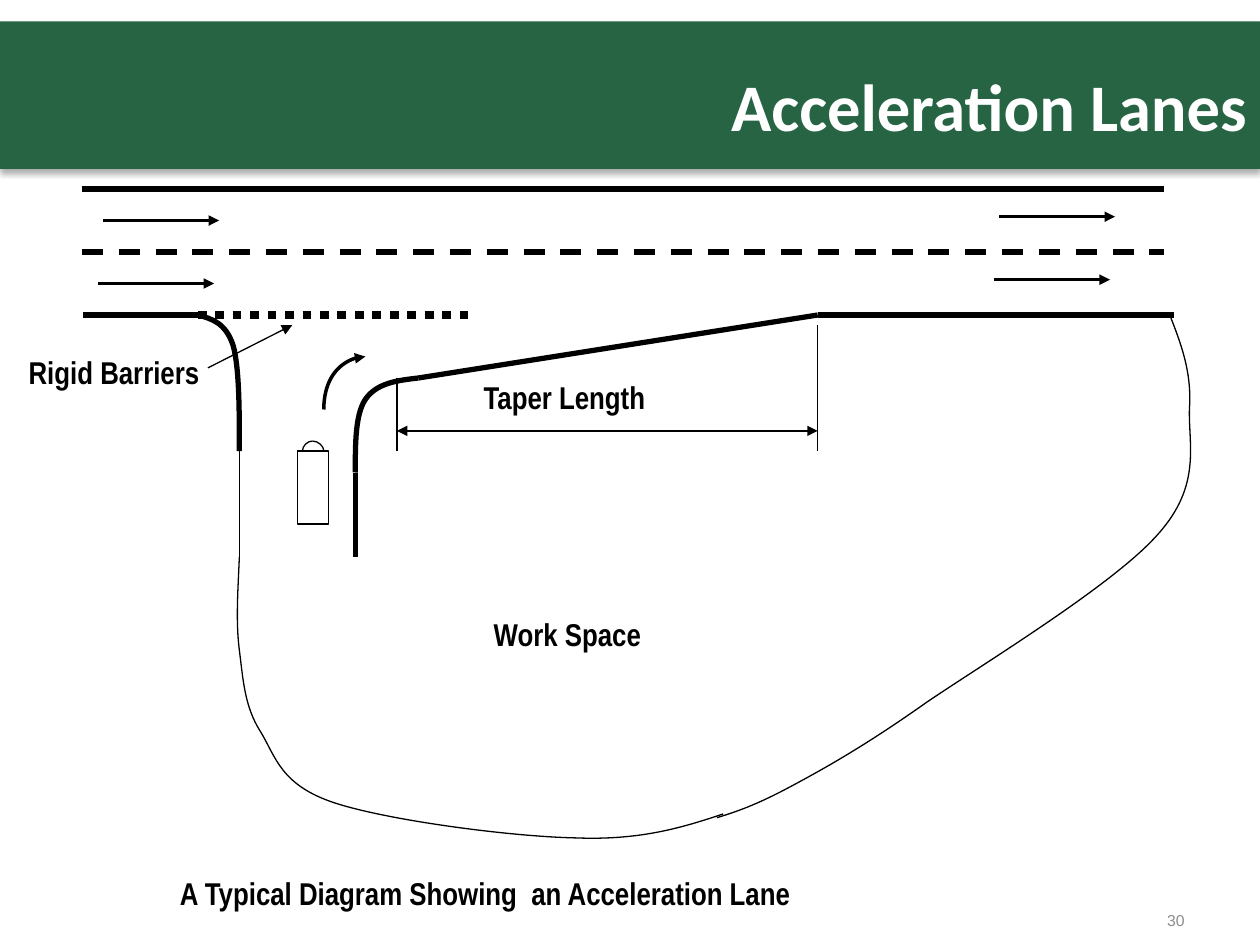
from lxml.etree import SubElement
from pptx import Presentation
from pptx.dml.color import RGBColor
from pptx.enum.dml import MSO_LINE
from pptx.enum.shapes import MSO_CONNECTOR, MSO_SHAPE
from pptx.enum.text import MSO_ANCHOR, PP_ALIGN
from pptx.oxml.ns import qn
from pptx.util import Inches, Pt

COLORS = {"banner": "276444", "title": "FFFFFF", "ink": "000000", "number": "8C8C8C"}
THIN, ARROW, EDGE, BARRIER = 0.75, 2, 3, 5


def color(name):
    return RGBColor.from_string(COLORS[name])


def style_line(shape, width, dash=None, ends=()):
    """Set the stroke; ends holds "headEnd" and/or "tailEnd" for arrowheads."""
    line = shape.line
    line.color.rgb = color("ink")
    line.width = Pt(width)
    if dash is not None:
        line.dash_style = dash
    stroke = line._get_or_add_ln()
    for end in ends:
        SubElement(stroke, qn(f"a:{end}"), type="triangle")


def add_line(slide, start, end, width, dash=None, ends=()):
    connector = slide.shapes.add_connector(
        MSO_CONNECTOR.STRAIGHT, *(Inches(value) for value in (*start, *end)))
    style_line(connector, width, dash, ends)
    SubElement(connector._element.spPr, qn("a:effectLst"))


def add_curve(slide, start, segments, width, ends=()):
    """Draw cubic Bezier segments, each given as x1, y1, x2, y2, x3, y3."""
    builder = slide.shapes.build_freeform(Inches(start[0]), Inches(start[1]))
    builder.add_line_segments(
        [(Inches(segment[i]), Inches(segment[i + 1]))
         for segment in segments for i in (0, 2, 4)], close=False)
    shape = builder.convert_to_shape()

    # Join every three straight segments into one curve
    outline = next(shape._element.iter(qn("a:path")))
    steps = outline.findall(qn("a:lnTo"))
    for first in range(0, len(steps), 3):
        curve = SubElement(outline, qn("a:cubicBezTo"))
        for step in steps[first:first + 3]:
            curve.append(step[0])
            outline.remove(step)

    shape.shadow.inherit = False
    shape.fill.background()
    style_line(shape, width, ends=ends)


def write_text(shape, text, font_name, size, color_name, align, bold):
    paragraph = shape.text_frame.paragraphs[0]
    paragraph.alignment = align
    run = paragraph.add_run()
    run.text = text
    font = run.font
    font.name, font.size, font.bold = font_name, Pt(size), bold
    font.color.rgb = color(color_name)


def add_text_box(slide, box):
    shape = slide.shapes.add_textbox(*(Inches(value) for value in box))
    shape.text_frame.word_wrap = True
    return shape


def add_label(slide, text, box, align=PP_ALIGN.LEFT):
    write_text(add_text_box(slide, box), text, "Arial Narrow", 18, "ink", align, True)


def add_header(slide):
    title = slide.shapes.title
    title.left, title.top, title.width, title.height = (
        Inches(value) for value in (0.08, 0.25, 9.92, 1.17))
    title.text_frame.vertical_anchor = MSO_ANCHOR.MIDDLE
    write_text(title, "Acceleration Lanes", "Calibri", 38, "title", PP_ALIGN.RIGHT, True)

    banner = slide.shapes.add_shape(
        MSO_SHAPE.RECTANGLE, 0, Inches(0.17), Inches(10), Inches(1.17))
    banner.fill.solid()
    banner.fill.fore_color.rgb = color("banner")
    banner.line.fill.background()
    effects = SubElement(banner._element.spPr, qn("a:effectLst"))
    shadow = SubElement(effects, qn("a:outerShdw"), blurRad=str(Pt(3.5)),
                        dist=str(Pt(2.2)), dir="5400000", rotWithShape="0")
    shade = SubElement(shadow, qn("a:srgbClr"), val=COLORS["ink"])
    SubElement(shade, qn("a:alpha"), val="32000")
    title._element.addprevious(banner._element)  # banner goes behind the title


def add_road(slide):
    # Main carriageway
    add_line(slide, (0.65, 1.5), (9.24, 1.5), EDGE)
    add_line(slide, (0.65, 2), (9.24, 2), EDGE, MSO_LINE.DASH)
    add_line(slide, (0.66, 2.5), (1.57, 2.5), EDGE)
    add_line(slide, (6.49, 2.5), (9.32, 2.5), EDGE)
    add_line(slide, (1.57, 2.5), (3.74, 2.5), BARRIER, MSO_LINE.ROUND_DOT)

    # Ramp edges and taper
    add_line(slide, (3.32, 3), (6.49, 2.5), EDGE)
    add_curve(slide, (3.32, 3), [(3.15, 3.02, 2.99, 3.04, 2.9, 3.17),
                                 (2.82, 3.29, 2.82, 3.52, 2.82, 3.75)], EDGE)
    add_line(slide, (2.82, 3.75), (2.82, 4.42), EDGE)
    add_curve(slide, (1.57, 2.5), [(1.68, 2.53, 1.79, 2.56, 1.85, 2.74),
                                   (1.9, 2.92, 1.9, 3.25, 1.9, 3.58)], EDGE)

    # Traffic direction
    for left, top in ((0.82, 1.75), (0.78, 2.25), (7.93, 1.72), (7.89, 2.22)):
        add_line(slide, (left, top), (left + 0.92, top), ARROW, ends=["tailEnd"])
    add_curve(slide, (2.9, 2.83), [(2.72, 2.83, 2.57, 3.02, 2.57, 3.25)],
              ARROW, ["headEnd"])


def add_vehicle(slide):
    body = slide.shapes.add_shape(
        MSO_SHAPE.RECTANGLE, Inches(2.36), Inches(3.58), Inches(0.25), Inches(0.58))
    body.shadow.inherit = False
    body.fill.background()
    style_line(body, THIN)
    # Rounded nose, left and right half
    for side in (2.4, 2.57):
        add_curve(slide, (2.48, 3.5),
                  [((2.48 + side) / 2, 3.5, side, 3.54, side, 3.58)], THIN)


def add_work_space(slide):
    add_line(slide, (1.9, 4.42), (1.9, 3.5), THIN)
    add_curve(slide, (1.9, 4.42), [(1.89, 4.67, 1.87, 4.93, 1.9, 5.16),
                                   (1.93, 5.39, 1.94, 5.61, 2.07, 5.81),
                                   (2.19, 6.01, 2.23, 6.23, 2.65, 6.37),
                                   (3.07, 6.51, 4.05, 6.64, 4.57, 6.65),
                                   (5.08, 6.67, 5.41, 6.57, 5.74, 6.46)], THIN)
    add_curve(slide, (5.69, 6.49), [(5.85, 6.44, 6, 6.39, 6.28, 6.24),
                                    (6.56, 6.09, 6.88, 5.91, 7.36, 5.57),
                                    (7.85, 5.24, 8.85, 4.63, 9.19, 4.24),
                                    (9.54, 3.85, 9.43, 3.53, 9.44, 3.24),
                                    (9.46, 2.95, 9.37, 2.72, 9.28, 2.49)], THIN)
    add_label(slide, "Work Space", (3.82, 4.83, 3.83, 0.5))


def add_annotations(slide):
    # Taper dimension
    add_line(slide, (3.15, 3), (3.15, 3.58), THIN)
    add_line(slide, (6.49, 2.58), (6.49, 3.58), THIN)
    add_line(slide, (3.15, 3.42), (6.49, 3.42), THIN, ends=["headEnd", "tailEnd"])
    add_label(slide, "Taper Length", (3.74, 2.95, 2.33, 0.5))

    # Barrier callout
    add_label(slide, "Rigid Barriers", (-0.08, 2.75, 1.97, 0.9), PP_ALIGN.CENTER)
    add_line(slide, (1.65, 2.92), (2.32, 2.58), THIN, ends=["tailEnd"])

    # Caption and slide number
    add_label(slide, "A Typical Diagram Showing  an Acceleration Lane",
              (1.33, 6.89, 7.42, 0.5))
    number = add_text_box(slide, (9, 7.1, 0.5, 0.4))
    number.text_frame.vertical_anchor = MSO_ANCHOR.MIDDLE
    write_text(number, "30", "Arial", 9, "number", PP_ALIGN.RIGHT, False)


def main():
    presentation = Presentation()
    presentation.slide_width, presentation.slide_height = Inches(10), Inches(7.5)
    slide = presentation.slides.add_slide(presentation.slide_layouts[5])
    add_header(slide)
    add_road(slide)
    add_vehicle(slide)
    add_work_space(slide)
    add_annotations(slide)
    presentation.save("out.pptx")


if __name__ == "__main__":
    main()
